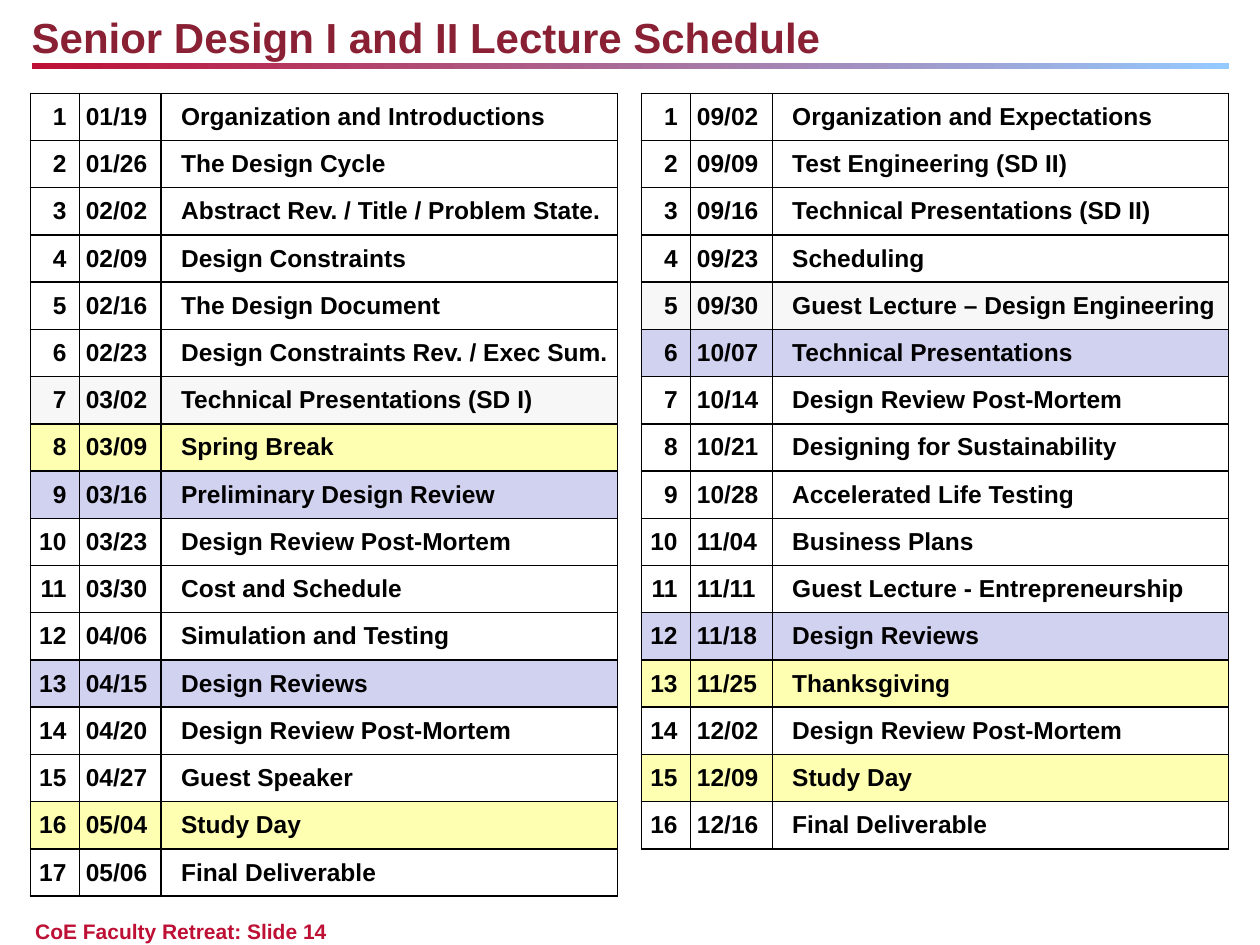
from dataclasses import dataclass

import pptx
import pptx.dml.color
import pptx.enum.shapes
import pptx.enum.text
import pptx.oxml
import pptx.oxml.ns
import pptx.util
from pptx.dml.color import RGBColor
from pptx.util import Cm

MAROON = RGBColor(0x89, 0x20, 0x34)
CRIMSON = RGBColor(0xBE, 0x0F, 0x34)
SKY = RGBColor(0x95, 0xCA, 0xFF)
BLACK = RGBColor(0x00, 0x00, 0x00)
PRESENTATION = RGBColor(0xF7, 0xF7, 0xF7)
HOLIDAY = RGBColor(0xFF, 0xFF, 0xB2)
REVIEW = RGBColor(0xD1, 0xD1, 0xF0)

FONT = "Arial"
TABLE_TOP = Cm(1.88)
ROW_HEIGHT = Cm(16.2) // 17
CELL_MARGIN = Cm(0.13)


@dataclass(frozen=True)
class Column:
    width: int
    left_margin: int = CELL_MARGIN
    right_margin: int = CELL_MARGIN
    align: pptx.enum.text.PP_ALIGN = pptx.enum.text.PP_ALIGN.LEFT


@dataclass(frozen=True)
class Lecture:
    date: str
    topic: str
    shade: RGBColor | None = None


@dataclass(frozen=True)
class Semester:
    left: int
    lectures: list[Lecture]


@dataclass(frozen=True)
class Caption:
    text: str
    left: int
    top: int
    width: int
    height: int
    top_margin: int
    size: int
    color: RGBColor


COLUMNS = [
    Column(Cm(0.99), right_margin=Cm(0.26), align=pptx.enum.text.PP_ALIGN.RIGHT),
    Column(Cm(1.65)),
    Column(Cm(9.2), left_margin=Cm(0.4)),
]

SEMESTERS = [
    Semester(Cm(0.61), [
        Lecture("01/19", "Organization and Introductions"),
        Lecture("01/26", "The Design Cycle"),
        Lecture("02/02", "Abstract Rev. / Title / Problem State."),
        Lecture("02/09", "Design Constraints"),
        Lecture("02/16", "The Design Document"),
        Lecture("02/23", "Design Constraints Rev. / Exec Sum."),
        Lecture("03/02", "Technical Presentations (SD I)", PRESENTATION),
        Lecture("03/09", "Spring Break", HOLIDAY),
        Lecture("03/16", "Preliminary Design Review", REVIEW),
        Lecture("03/23", "Design Review Post-Mortem"),
        Lecture("03/30", "Cost and Schedule"),
        Lecture("04/06", "Simulation and Testing"),
        Lecture("04/15", "Design Reviews", REVIEW),
        Lecture("04/20", "Design Review Post-Mortem"),
        Lecture("04/27", "Guest Speaker"),
        Lecture("05/04", "Study Day", HOLIDAY),
        Lecture("05/06", "Final Deliverable"),
    ]),
    Semester(Cm(12.93), [
        Lecture("09/02", "Organization and Expectations"),
        Lecture("09/09", "Test Engineering (SD II)"),
        Lecture("09/16", "Technical Presentations (SD II)"),
        Lecture("09/23", "Scheduling"),
        Lecture("09/30", "Guest Lecture – Design Engineering", PRESENTATION),
        Lecture("10/07", "Technical Presentations", REVIEW),
        Lecture("10/14", "Design Review Post-Mortem"),
        Lecture("10/21", "Designing for Sustainability"),
        Lecture("10/28", "Accelerated Life Testing"),
        Lecture("11/04", "Business Plans"),
        Lecture("11/11", "Guest Lecture - Entrepreneurship"),
        Lecture("11/18", "Design Reviews", REVIEW),
        Lecture("11/25", "Thanksgiving", HOLIDAY),
        Lecture("12/02", "Design Review Post-Mortem"),
        Lecture("12/09", "Study Day", HOLIDAY),
        Lecture("12/16", "Final Deliverable"),
    ]),
]

CAPTIONS = [
    Caption("CoE Faculty Retreat: Slide 14", Cm(0.71), Cm(18.47), Cm(22.66), Cm(0.51),
            Cm(0.05), 12, CRIMSON),
    Caption("Senior Design I and II Lecture Schedule", Cm(0.64), Cm(0.15), Cm(24.08),
            Cm(1.02), Cm(0.09), 24, MAROON),
]


def format_text(paragraph, size: int, color: RGBColor) -> None:
    for run in paragraph.runs:
        run.font.name = FONT
        run.font.size = pptx.util.Pt(size)
        run.font.bold = True
        run.font.color.rgb = color


def add_caption(slide, caption: Caption) -> None:
    box = slide.shapes.add_textbox(caption.left, caption.top, caption.width, caption.height)
    frame = box.text_frame
    frame.word_wrap = True
    frame.margin_left = frame.margin_right = frame.margin_bottom = 0
    frame.margin_top = caption.top_margin
    frame.text = caption.text
    format_text(frame.paragraphs[0], caption.size, caption.color)


def add_title_rule(slide) -> None:
    rule = slide.shapes.add_shape(pptx.enum.shapes.MSO_SHAPE.RECTANGLE,
                                  Cm(0.64), Cm(1.27), Cm(24.13), Cm(0.13))
    rule.shadow.inherit = False
    rule.line.fill.background()
    rule.fill.gradient()
    rule.fill.gradient_angle = 0
    for stop, color in zip(rule.fill.gradient_stops, (CRIMSON, SKY)):
        stop.color.rgb = color


def add_borders(cell) -> None:
    properties = cell._tc.get_or_add_tcPr()
    for side in ("lnL", "lnR", "lnT", "lnB"):
        properties.append(pptx.oxml.parse_xml(
            f'<a:{side} {pptx.oxml.ns.nsdecls("a")} w="{pptx.util.Pt(1)}">'
            f'<a:solidFill><a:srgbClr val="{BLACK}"/></a:solidFill></a:{side}>'))


def fill_cell(cell, text: str, column: Column, shade: RGBColor | None) -> None:
    cell.margin_left, cell.margin_right = column.left_margin, column.right_margin
    cell.margin_top = cell.margin_bottom = CELL_MARGIN
    cell.vertical_anchor = pptx.enum.text.MSO_ANCHOR.MIDDLE
    add_borders(cell)
    if shade is None:
        cell.fill.background()
    else:
        cell.fill.solid()
        cell.fill.fore_color.rgb = shade
    paragraph = cell.text_frame.paragraphs[0]
    paragraph.text = text
    paragraph.alignment = column.align
    format_text(paragraph, 14, BLACK)


def add_schedule(slide, semester: Semester) -> None:
    row_count = len(semester.lectures)
    schedule = slide.shapes.add_table(
        row_count, len(COLUMNS), semester.left, TABLE_TOP,
        sum(column.width for column in COLUMNS), ROW_HEIGHT * row_count).table
    schedule.first_row = schedule.horz_banding = False
    for index, column in enumerate(COLUMNS):
        schedule.columns[index].width = column.width
    for week, lecture in enumerate(semester.lectures, start=1):
        row = schedule.rows[week - 1]
        row.height = ROW_HEIGHT
        texts = (str(week), lecture.date, lecture.topic)
        for cell, text, column in zip(row.cells, texts, COLUMNS):
            fill_cell(cell, text, column, lecture.shade)


def main() -> None:
    deck = pptx.Presentation()
    deck.slide_width, deck.slide_height = Cm(25.4), Cm(19.05)
    slide = deck.slides.add_slide(deck.slide_layouts[6])
    add_title_rule(slide)
    for caption in CAPTIONS:
        add_caption(slide, caption)
    for semester in SEMESTERS:
        add_schedule(slide, semester)
    deck.save("out.pptx")


if __name__ == "__main__":
    main()
